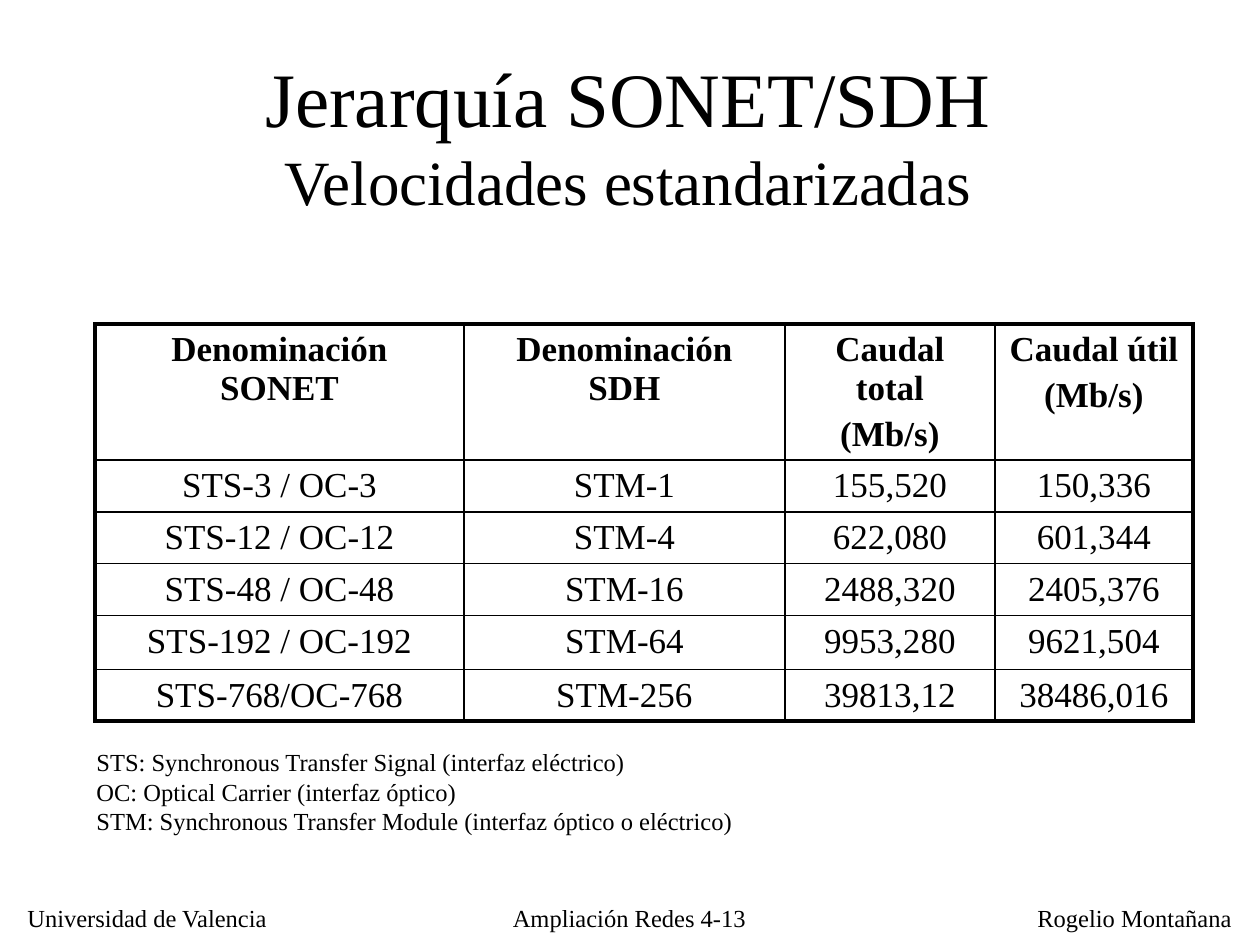
from dataclasses import dataclass

from lxml.etree import SubElement
from pptx import Presentation
from pptx.dml.color import RGBColor
from pptx.enum.text import MSO_ANCHOR, MSO_AUTO_SIZE, PP_ALIGN
from pptx.oxml.ns import qn
from pptx.util import Pt

PX = 914400 // 126
FONT = "Times New Roman"
COLORS = {"ink": "000000"}
LEFT, MID = PP_ALIGN.LEFT, PP_ALIGN.CENTER
THIN, THICK = 1, 2.25


@dataclass
class Note:
    left: int
    top: int
    width: int
    height: int
    lines: list[str]
    wrap: bool = False
    align: PP_ALIGN = LEFT


COLS = [369, 321, 210, 198]
ROWS = [136, 52, 51, 52, 54, 51]
CELLS = [
    ["Denominación SONET", "Denominación SDH", "Caudal total\n(Mb/s)", "Caudal útil\n(Mb/s)"],
    ["STS-3 / OC-3", "STM-1", "155,520", "150,336"],
    ["STS-12 / OC-12", "STM-4", "622,080", "601,344"],
    ["STS-48 / OC-48", "STM-16", "2488,320", "2405,376"],
    ["STS-192 / OC-192", "STM-64", "9953,280", "9621,504"],
    ["STS-768/OC-768", "STM-256", "39813,12", "38486,016"],
]
NOTES = [
    Note(84, 741, 662, 101, [
        "STS: Synchronous Transfer Signal (interfaz eléctrico)",
        "OC: Optical Carrier (interfaz óptico)",
        "STM: Synchronous Transfer Module (interfaz óptico o eléctrico)",
    ]),
    Note(15, 897, 268, 42, ["Universidad de Valencia"]),
    Note(491, 897, 277, 39, ["Ampliación Redes 4-13"], wrap=True, align=MID),
    Note(1025, 897, 222, 42, ["Rogelio Montañana"]),
]


def style(font, size: float, bold: bool = False) -> None:
    font.name, font.size, font.bold = FONT, Pt(size), bold
    font.color.rgb = RGBColor.from_string(COLORS["ink"])


def write(frame, lines: list[str], *, size: float = 14, bold: bool = False,
          align: PP_ALIGN = LEFT, gap: float = 0) -> None:
    for i, line in enumerate(lines):
        para = frame.add_paragraph() if i else frame.paragraphs[0]
        para.alignment = align
        para.space_before = Pt(gap if i else 0)
        run = para.add_run()
        run.text = line
        style(run.font, size, bold)


def add_title(slide) -> None:
    title = slide.shapes.title
    title.left, title.top = 30 * PX, 45 * PX
    title.width, title.height = 1196 * PX, 179 * PX
    frame = title.text_frame
    frame.word_wrap = True
    frame.auto_size = MSO_AUTO_SIZE.NONE
    frame.vertical_anchor = MSO_ANCHOR.MIDDLE
    write(frame, ["Jerarquía SONET/SDH"], size=44, align=MID)
    para = frame.paragraphs[0]
    para.add_line_break()
    run = para.add_run()
    run.text = "Velocidades estandarizadas"
    style(run.font, 36)


def add_edges(cell, widths: dict[str, float]) -> None:
    props = cell._tc.get_or_add_tcPr()
    for side, width in widths.items():
        line = SubElement(props, qn(f"a:ln{side}"), w=str(int(Pt(width))))
        fill = SubElement(line, qn("a:solidFill"))
        SubElement(fill, qn("a:srgbClr"), val=COLORS["ink"])


def add_grid(slide) -> None:
    table = slide.shapes.add_table(
        len(ROWS), len(COLS), 95 * PX, 324 * PX, sum(COLS) * PX, sum(ROWS) * PX
    ).table
    table.first_row = table.horz_banding = False
    for col, width in zip(table.columns, COLS):
        col.width = width * PX
    for row, height in zip(table.rows, ROWS):
        row.height = height * PX
    for r, texts in enumerate(CELLS):
        for c, text in enumerate(texts):
            cell = table.cell(r, c)
            write(cell.text_frame, text.split("\n"), size=20, bold=r == 0, align=MID, gap=4)
            # Heavy frame outside, thin rules inside
            outer = {"L": c == 0, "R": c == len(COLS) - 1,
                     "T": r == 0, "B": r == len(ROWS) - 1}
            add_edges(cell, {side: THICK if edge else THIN for side, edge in outer.items()})
            cell.fill.background()


def add_note(slide, note: Note) -> None:
    box = slide.shapes.add_textbox(
        note.left * PX, note.top * PX, note.width * PX, note.height * PX
    )
    frame = box.text_frame
    frame.word_wrap = note.wrap
    if not note.wrap:
        frame.auto_size = MSO_AUTO_SIZE.SHAPE_TO_FIT_TEXT
    write(frame, note.lines, align=note.align)


def main() -> None:
    deck = Presentation()
    deck.slide_width, deck.slide_height = 1260 * PX, 945 * PX
    slide = deck.slides.add_slide(deck.slide_layouts[5])
    add_title(slide)
    # Speed table
    add_grid(slide)
    # Legend and footer
    for note in NOTES:
        add_note(slide, note)
    deck.save("out.pptx")


if __name__ == "__main__":
    main()
